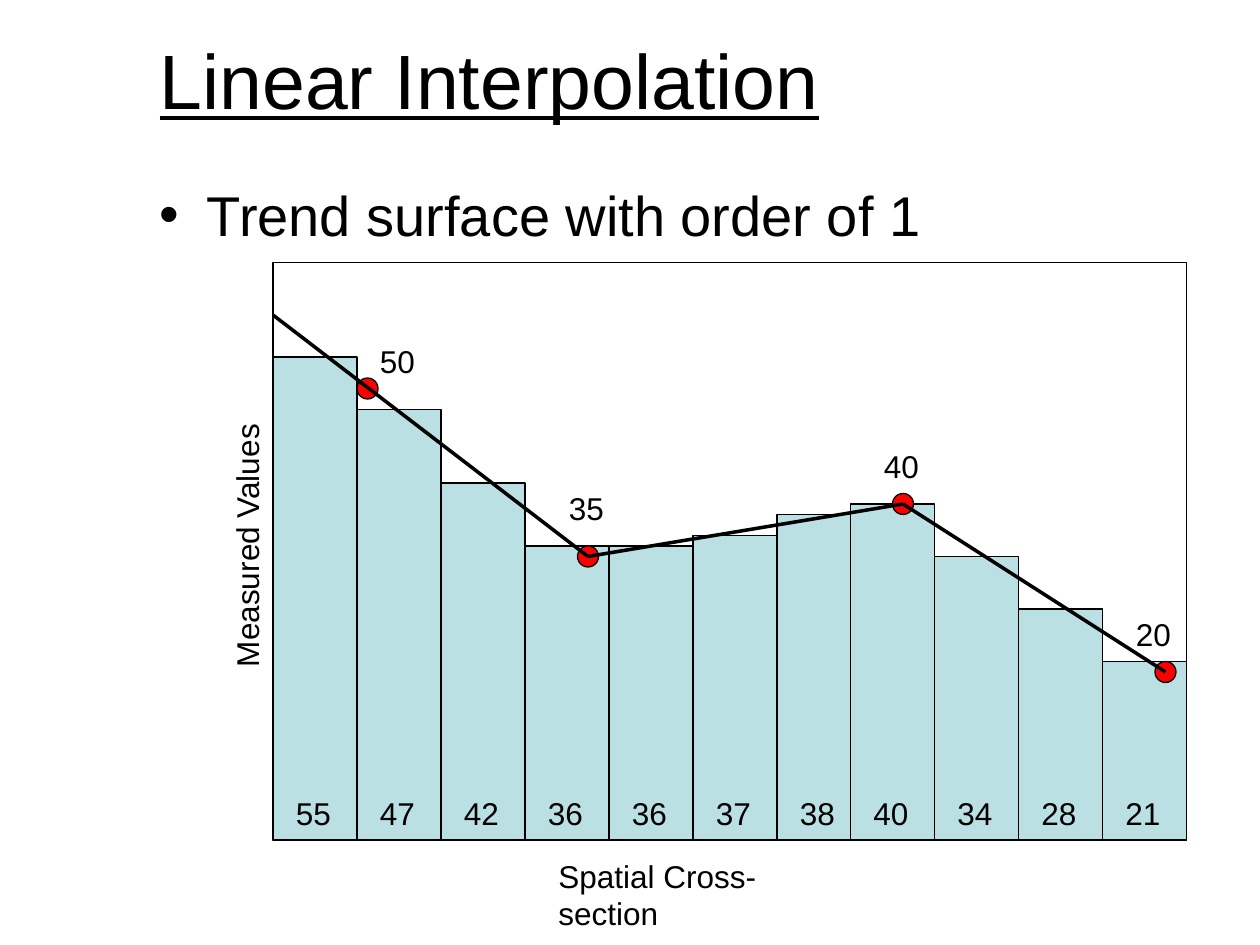
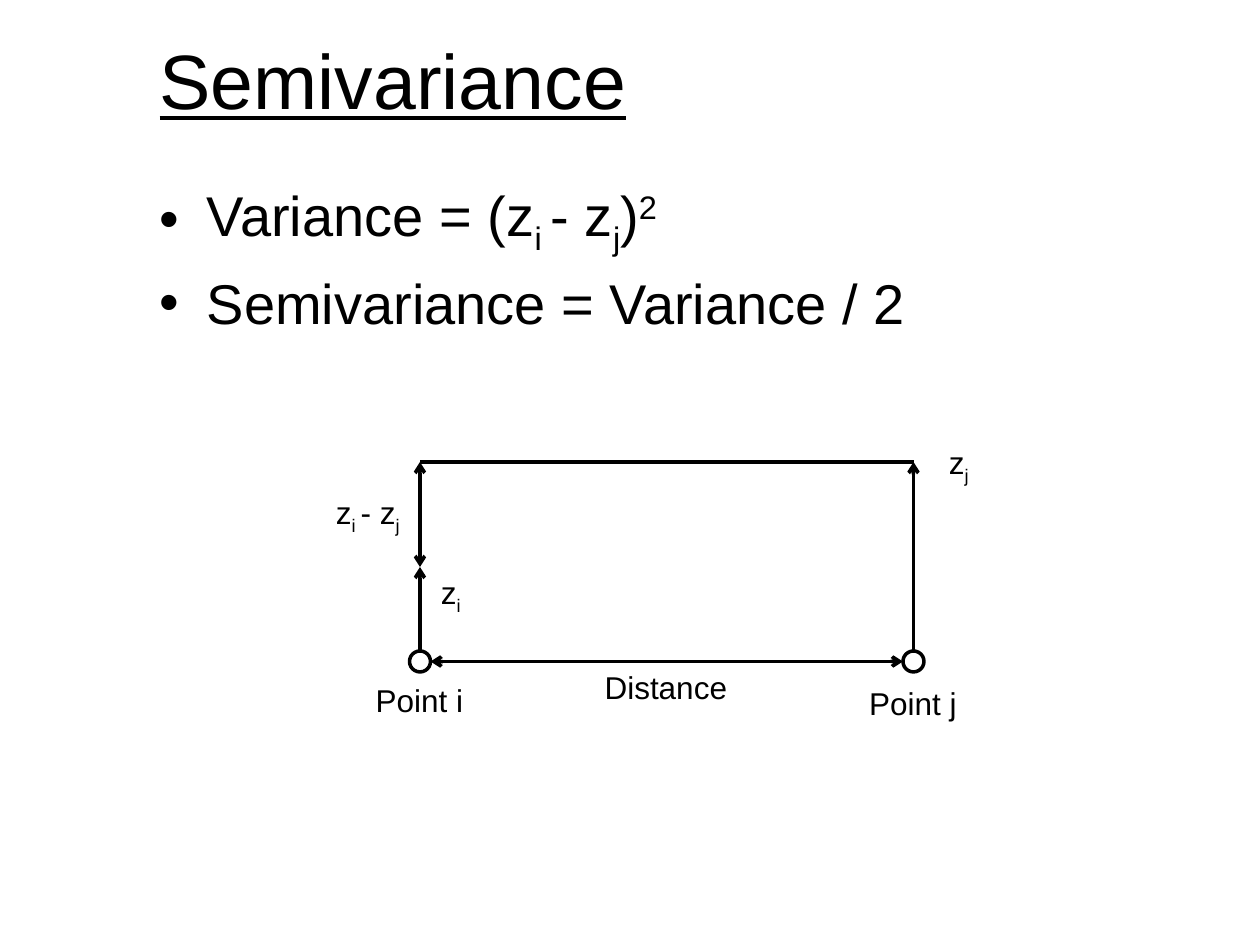
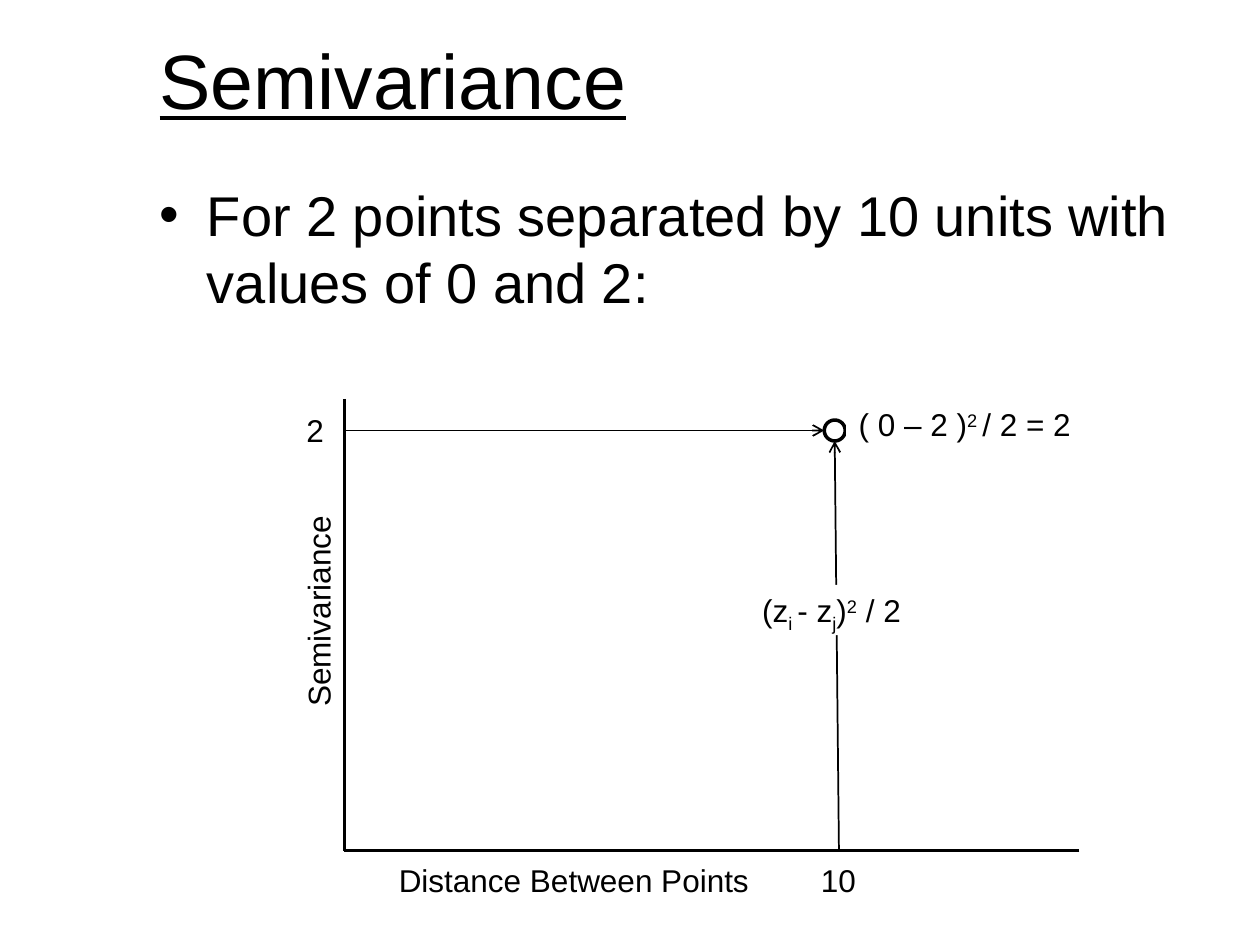
from lxml import etree
from pptx import Presentation
from pptx.dml.color import RGBColor
from pptx.enum.shapes import MSO_CONNECTOR, MSO_SHAPE
from pptx.enum.text import MSO_ANCHOR, MSO_AUTO_SIZE, PP_ALIGN
from pptx.oxml.ns import qn
from pptx.util import Inches, Pt

STRAIGHT = MSO_CONNECTOR.STRAIGHT
RECTANGLE, OVAL = MSO_SHAPE.RECTANGLE, MSO_SHAPE.OVAL
MIDDLE, TOP, LEFT = MSO_ANCHOR.MIDDLE, MSO_ANCHOR.TOP, PP_ALIGN.LEFT
NO_FIT, GROW = MSO_AUTO_SIZE.NONE, MSO_AUTO_SIZE.SHAPE_TO_FIT_TEXT

COLORS = {"ink": "000000", "paper": "FFFFFF", "bar": "BBE0E3", "sample": "FF0000"}
TITLE_FONT = {"name": "Arial", "size": Pt(44), "underline": True}
BODY_FONT = {"name": "Arial", "size": Pt(32)}
LABEL_FONT = {"name": "Arial", "size": Pt(18)}
BASELINES = {"_": "-25000", "^": "30000"}

prs = Presentation()
prs.slide_width, prs.slide_height = Inches(10), Inches(7.5)
COLUMNS = 120  # square grid: 120 columns by 90 rows
UNIT = prs.slide_width / COLUMNS
LABEL_HEIGHT, NUMBER_WIDTH, DOT = 4.8, 5.8, 2


def grid(*cells):
    return [round(cell * UNIT) for cell in cells]


def write(paragraph, text, style):
    """Runs are parted by |, with _ for subscript and ^ for superscript."""
    for part in text.split("|"):
        run = paragraph.add_run()
        run.text = part.lstrip("_^")
        for attribute, value in style.items():
            setattr(run.font, attribute, value)
        run.font.color.rgb = RGBColor.from_string(COLORS["ink"])
        if part[0] in BASELINES:
            run.font._element.set("baseline", BASELINES[part[0]])


# Bars of the cross-section: value and top row
bars = [(55, 34), (47, 39), (42, 46), (36, 52), (36, 52), (37, 51),
        (38, 49), (40, 48), (34, 53), (28, 58), (21, 63)]
FIRST_COLUMN, BAR_WIDTH, BASE_ROW, VALUE_ROW = 26, 8, 80, 75
# The bars from the eighth on stand one column closer
bar_columns = [FIRST_COLUMN + BAR_WIDTH * i - (i >= 7) for i in range(len(bars))]
bar_boxes = [(column, top, BAR_WIDTH, BASE_ROW - top, "bar")
             for column, (_, top) in zip(bar_columns, bars)]
bar_values = [(str(value), column + 1, VALUE_ROW, NUMBER_WIDTH)
              for column, (value, _) in zip(bar_columns, bars)]

# boxes: left, top, width, height, fill
# dots: centre column and row
# lines: from, to, weight, arrow ends
# labels: text, left, top, width; turned and masked list label texts
slides = [
    {
        "title": "Linear Interpolation",
        "bullets": ["Trend surface with order of 1"],
        "body_rows": 65,
        "boxes": bar_boxes + [(FIRST_COLUMN, 25, 87, 55, None)],
        "dots": [(35, 37), (56, 53), (86, 48), (111, 64)],
        "dot_style": ("sample", 0.75),
        "lines": [(26, 30, 56, 53, 2, ""), (56, 53, 86, 48, 2, ""),
                  (86, 48, 111, 64, 2, "")],
        "labels": [("Measured Values", 10.6, 49.4, 25.8),
                   ("Spatial Cross-section", 52, 81, 30.7),
                   ("50", 35, 32, NUMBER_WIDTH), ("35", 53, 46, NUMBER_WIDTH),
                   ("40", 83, 42, NUMBER_WIDTH), ("20", 107, 58, NUMBER_WIDTH),
                   *bar_values],
        "turned": ["Measured Values"],
        "masked": [],
    },
    {
        "title": "Semivariance",
        "bullets": ["Variance = (z|_i |- z|_j|)|^2", "Semivariance = Variance / 2"],
        "body_rows": 19,
        "boxes": [],
        "dots": [(40, 63), (87, 63)],
        "dot_style": ("paper", 2),
        "lines": [(41, 63, 86, 63, 2, "head tail"), (40, 62, 40, 54, 2, "tail"),
                  (87, 62, 87, 44, 2, "tail"), (87, 44, 40, 44, 2, ""),
                  (40, 54, 40, 44, 2, "head tail")],
        "labels": [("Distance", 56.4, 63, 14.2), ("Point i", 34.6, 64.3, 10.8),
                   ("Point j", 81.6, 64.6, 10.8), ("z|_i", 40.8, 54, 4.3),
                   ("z|_j", 89.2, 41.6, 4.3), ("z|_i |- z|_j", 30.8, 46.4, 8.8)],
        "turned": [],
        "masked": [],
    },
    {
        "title": "Semivariance",
        "bullets": ["For 2 points separated by 10 units with values of 0 and 2:"],
        "body_rows": 65,
        "boxes": [],
        "dots": [(79.5, 41)],
        "dot_style": ("paper", 2),
        "lines": [(32.8, 38, 32.8, 81, 2, ""), (102.8, 81, 32.8, 81, 2, ""),
                  (79.9, 81, 79.5, 42, 1, "tail"), (32.8, 41, 78.5, 41, 1, "tail")],
        "labels": [("Semivariance", 19.9, 55.7, 20.8),
                   ("Distance Between Points", 36.8, 81.4, 36.1),
                   ("2", 28, 38.6, 4.1), ("10", 77, 81.4, NUMBER_WIDTH),
                   ("( 0 – 2 )|^2 |/ 2 = 2", 80.6, 38, 23),
                   ("(z|_i |- z|_j|)|^2| / 2", 71.4, 55.7, 16.1)],
        "turned": ["Semivariance"],
        "masked": ["( 0 – 2 )|^2 |/ 2 = 2", "(z|_i |- z|_j|)|^2| / 2"],
    },
]

for content in slides:
    slide = prs.slides.add_slide(prs.slide_layouts[1])
    shapes = slide.shapes

    # Title and bullet list
    heading, body = slide.placeholders[0], slide.placeholders[1]
    for holder, top, rows, anchor in [(heading, 0, 15, MIDDLE),
                                      (body, 16, content["body_rows"], TOP)]:
        holder.left, holder.top, holder.width, holder.height = grid(14, top, 104, rows)
        holder.text_frame.auto_size = NO_FIT
        holder.text_frame.vertical_anchor = anchor
    heading.text_frame.paragraphs[0].alignment = LEFT
    write(heading.text_frame.paragraphs[0], content["title"], TITLE_FONT)
    body.text_frame.margin_top = Inches(0.1)
    for number, bullet in enumerate(content["bullets"]):
        if number:
            paragraph = body.text_frame.add_paragraph()
        else:
            paragraph = body.text_frame.paragraphs[0]
            paragraph.space_before = Pt(0)
        write(paragraph, bullet, BODY_FONT)

    # Bars, frame and sample points
    dot_fill, dot_weight = content["dot_style"]
    outlines = [(RECTANGLE, *box, 0.75) for box in content["boxes"]]
    outlines += [(OVAL, x - DOT / 2, y - DOT / 2, DOT, DOT, dot_fill, dot_weight)
                 for x, y in content["dots"]]
    for kind, left, top, width, height, fill, weight in outlines:
        outline = shapes.add_shape(kind, *grid(left, top, width, height))
        outline.shadow.inherit = False
        if fill:
            outline.fill.solid()
            outline.fill.fore_color.rgb = RGBColor.from_string(COLORS[fill])
        else:
            outline.fill.background()
        outline.line.color.rgb = RGBColor.from_string(COLORS["ink"])
        outline.line.width = Pt(weight)

    # Lines and arrows
    for x1, y1, x2, y2, weight, ends in content["lines"]:
        line = shapes.add_connector(STRAIGHT, *grid(x1, y1, x2, y2))
        line.line.color.rgb = RGBColor.from_string(COLORS["ink"])
        line.line.width = Pt(weight)
        properties = line._element.spPr
        for end in ends.split():
            etree.SubElement(properties.find(qn("a:ln")), qn(f"a:{end}End"), type="arrow")
        etree.SubElement(properties, qn("a:effectLst"))

    # Labels
    for text, left, top, width in content["labels"]:
        label = shapes.add_textbox(*grid(left, top, width, LABEL_HEIGHT))
        label.text_frame.word_wrap = False
        label.text_frame.auto_size = GROW
        if text in content["turned"]:
            label.rotation = 270
        if text in content["masked"]:
            label.fill.solid()
            label.fill.fore_color.rgb = RGBColor.from_string(COLORS["paper"])
        write(label.text_frame.paragraphs[0], text, LABEL_FONT)

prs.save("out.pptx")
